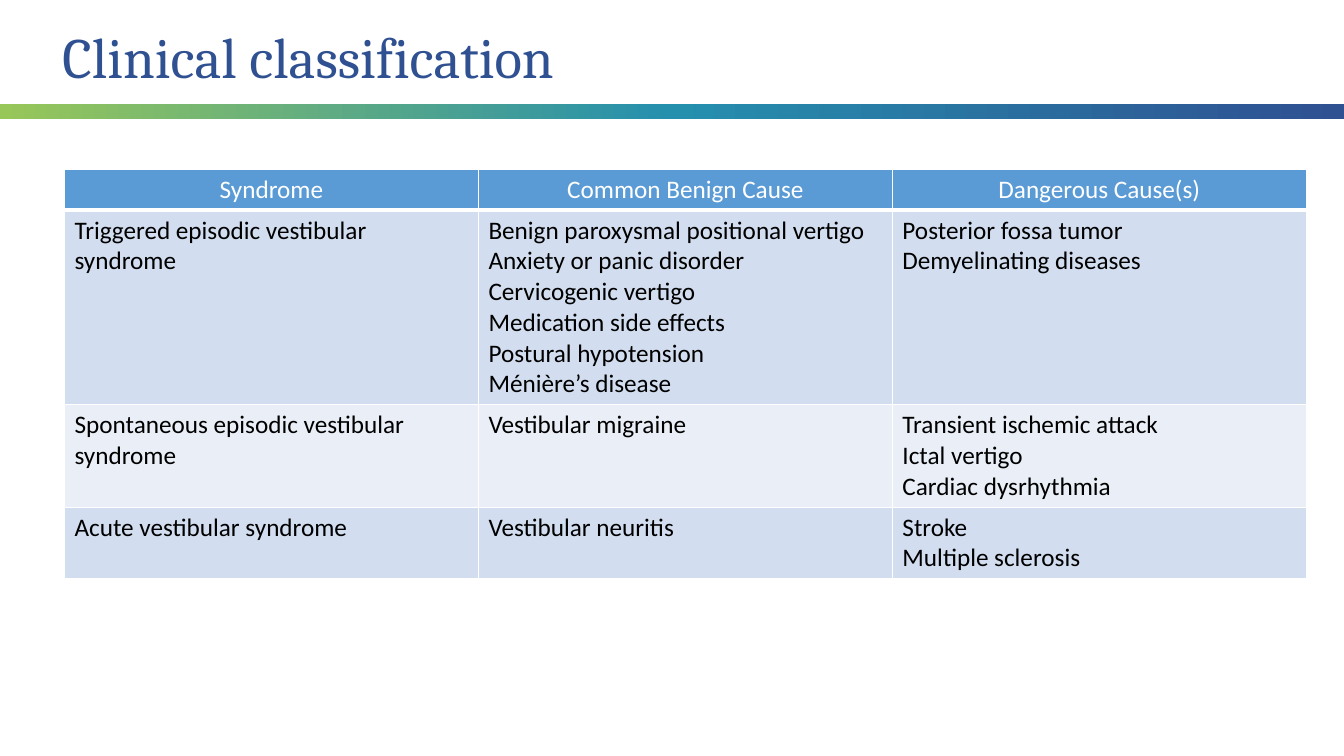
from copy import deepcopy

from lxml.etree import SubElement
from pptx import Presentation
from pptx.dml.color import RGBColor
from pptx.enum.shapes import MSO_SHAPE as SHAPE
from pptx.enum.text import MSO_ANCHOR as ANCHOR, PP_ALIGN as ALIGN
from pptx.oxml.ns import qn
from pptx.util import Inches, Pt

NAVY, TEAL, LIME = "2F5091", "258FAE", "98C759"
WHITE, BLACK, HEADER_BLUE = "FFFFFF", "000000", "5B9BD5"
BANDS = ["D2DEEF", "EAEFF7"]

HEADERS = ["Syndrome", "Common Benign Cause", "Dangerous Cause(s)"]
SYNDROMES = [
    ["Triggered episodic vestibular syndrome",
     "Benign paroxysmal positional vertigo\nAnxiety or panic disorder\n"
     "Cervicogenic vertigo\nMedication side effects\n"
     "Postural hypotension\nMénière’s disease",
     "Posterior fossa tumor\nDemyelinating diseases"],
    ["Spontaneous episodic vestibular syndrome",
     "Vestibular migraine",
     "Transient ischemic attack\nIctal vertigo\nCardiac dysrhythmia"],
    ["Acute vestibular syndrome",
     "Vestibular neuritis",
     "Stroke\nMultiple sclerosis"],
]


def rgb(color):
    return RGBColor.from_string(color)


class Deck:
    """Style and current slide; lengths are hundredths of the slide's sides."""
    title_font, body_font = "Cambria", "Calibri"
    title_size, body_size = 40.7, 18
    line_rows, padding_rows = 4.07, 1.33

    def __init__(self):
        self.prs = Presentation()
        self.prs.slide_width, self.prs.slide_height = Inches(13.33), Inches(7.5)
        self.s = self.prs.slides.add_slide(self.prs.slide_layouts[6])

    def cols(self, n):
        return int(self.prs.slide_width * n / 100)

    def rows(self, n):
        return int(self.prs.slide_height * n / 100)

    def box(self, x, y, w, h):
        return self.cols(x), self.rows(y), self.cols(w), self.rows(h)

    def set_text(self, tf, text, font, size, color, align=ALIGN.LEFT):
        tf.text = text
        for p in tf.paragraphs:
            p.alignment = align
            for r in p.runs:
                r.font.name, r.font.size = font, Pt(size)
                r.font.color.rgb = rgb(color)

    def gradient_bar(self, x, y, w, h, start, middle, end):
        sp = self.s.shapes.add_shape(SHAPE.RECTANGLE, *self.box(x, y, w, h))
        sp.shadow.inherit = False
        sp.line.fill.background()
        sp.fill.gradient()
        sp.fill.gradient_angle = 0
        first = sp._element.spPr.find(".//" + qn("a:gs"))
        first.addnext(deepcopy(first))
        for i, (stop, color) in enumerate(
                zip(sp.fill.gradient_stops, [start, middle, end])):
            stop.position = i / 2
            stop.color.rgb = rgb(color)

    def title(self, x, y, w, h, text):
        tf = self.s.shapes.add_textbox(*self.box(x, y, w, h)).text_frame
        tf.word_wrap = True
        tf.vertical_anchor = ANCHOR.MIDDLE
        self.set_text(tf, text, self.title_font, self.title_size, NAVY)
        p = tf.paragraphs[0]
        p.line_spacing, p.space_before = 0.8, Pt(10)

    def borders(self, cell, bottom):
        tc_pr = cell._tc.get_or_add_tcPr()
        for side, width in zip("LRTB", [1, 1, 1, bottom]):
            ln = SubElement(tc_pr, qn("a:ln" + side), w=str(Pt(width)))
            fill = SubElement(ln, qn("a:solidFill"))
            SubElement(fill, qn("a:srgbClr"), val=WHITE)

    def table(self, x, y, w, headers, body):
        """Banded table whose rows are as tall as their longest cell."""
        data = [headers] + body
        heights = [self.padding_rows + self.line_rows
                   * max(text.count("\n") + 1 for text in row) for row in data]
        table = self.s.shapes.add_table(
            len(data), len(headers), *self.box(x, y, w, sum(heights))).table
        for i, (row, height) in enumerate(zip(data, heights)):
            table.rows[i].height = self.rows(height)
            head = i == 0
            for j, text in enumerate(row):
                cell = table.cell(i, j)
                self.set_text(cell.text_frame, text, self.body_font,
                              self.body_size, WHITE if head else BLACK,
                              ALIGN.CENTER if head else ALIGN.LEFT)
                self.borders(cell, bottom=3 if head else 1)
                cell.fill.solid()
                cell.fill.fore_color.rgb = rgb(
                    HEADER_BLUE if head else BANDS[(i - 1) % 2])


def main():
    deck = Deck()
    deck.gradient_bar(0, 13.8, 100, 2, LIME, TEAL, NAVY)
    deck.title(3.9, 3.6, 67.2, 9.2, "Clinical classification")
    deck.table(4.8, 22.4, 92.4, HEADERS, SYNDROMES)
    deck.prs.save("out.pptx")


if __name__ == "__main__":
    main()
